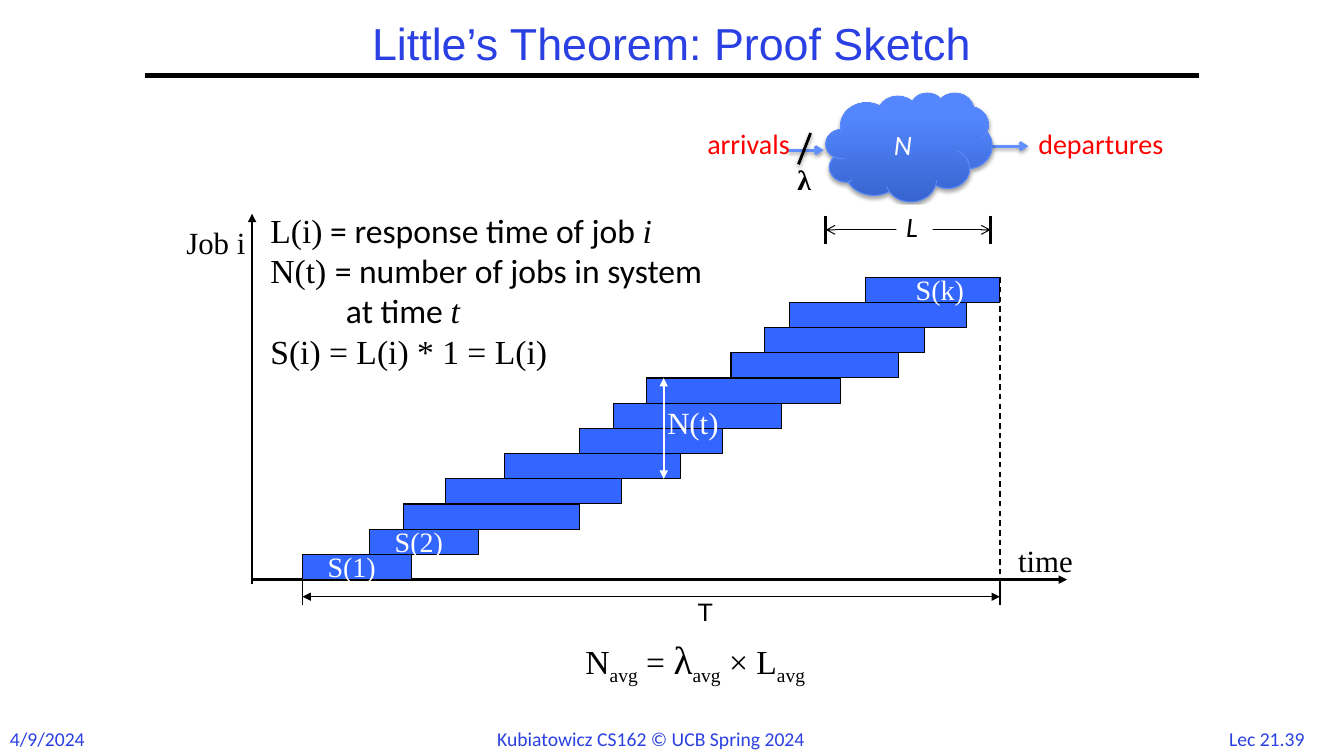
from lxml import etree
from pptx import Presentation
from pptx.dml.color import RGBColor
from pptx.enum.dml import MSO_LINE
from pptx.enum.shapes import MSO_CONNECTOR, MSO_SHAPE
from pptx.enum.text import MSO_ANCHOR, PP_ALIGN
from pptx.oxml.ns import qn
from pptx.util import Emu, Inches, Pt

WIDTH, HEIGHT = Inches(13.33), Inches(7.5)
COL, ROW = Inches(1) / 12, Inches(0.25)  # one time step, one job

BLACK = RGBColor(0x00, 0x00, 0x00)
WHITE = RGBColor(0xFF, 0xFF, 0xFF)
RED = RGBColor(0xFF, 0x00, 0x00)
TITLE_BLUE = RGBColor(0x2A, 0x40, 0xE2)
BAR_BLUE = RGBColor(0x33, 0x66, 0xFF)
FLOW_BLUE = RGBColor(0x61, 0x8F, 0xFD)
CLOUD_DARK = RGBColor(0x37, 0x64, 0xCE)
CLOUD_LIGHT = RGBColor(0x54, 0x87, 0xFF)
CLOUD_EDGE = RGBColor(0x5B, 0x8A, 0xFB)

SANS, SERIF, TITLE_FONT = "Calibri", "Times New Roman", "Arial"

BASE = 23  # row of the time axis
FIRST, LAST = 36, 119  # columns where the observed period T starts and ends
JOBS = [(36, 13), (44, 13), (48, 21), (53, 21), (60, 21), (69, 17),
        (73, 20), (77, 23), (87, 20), (91, 19), (94, 21), (103, 16)]
JOB_LABELS = [(0, "S(1)", 1.8), (1, "S(2)", 1.8), (11, "S(k)", 4.8)]

DEFINITIONS = [
    [("L(i)", SERIF, False), (" = response time of job ", SANS, False), ("i", SERIF, True)],
    [("N(t) ", SERIF, False), ("= number of jobs in system", SANS, False)],
    [("at time ", SANS, False), ("t", SERIF, True)],
    [("S(i) = L(i) * 1 = L(i)", SERIF, False)],
]
FORMULA = [("N", 24, False), ("avg", 24, True), (" = ", 24, False), ("λ", 28, False),
           ("avg", 24, True), (" × L", 24, False), ("avg", 24, True)]


def x(cols):
    return Emu(round(cols * COL))


def y(rows):
    return Emu(round(rows * ROW))


def box(col, row, cols, rows):
    return x(col), y(row), x(cols), y(rows)


def set_font(font, size, name, color=BLACK, bold=False, italic=False):
    font.size, font.name, font.color.rgb = Pt(size), name, color
    if bold:
        font.bold = True
    if italic:
        font.italic = True


def set_effects(sp, alpha=None, distance=1.6):
    """Give a downward shadow of that opacity in percent, or none at all."""
    effects = etree.SubElement(sp._element.spPr, qn("a:effectLst"))
    if alpha:
        shadow = etree.SubElement(effects, qn("a:outerShdw"), blurRad=str(Pt(3.1)),
                                  dist=str(Pt(distance)), dir="5400000", rotWithShape="0")
        color = etree.SubElement(shadow, qn("a:srgbClr"), val=str(BLACK))
        etree.SubElement(color, qn("a:alpha"), val=str(alpha * 1000))


def add_line(slide, start, end, width, color=BLACK, head=None, tail=None,
             dashed=False, shadow=None):
    (x1, y1), (x2, y2) = start, end
    line = slide.shapes.add_connector(MSO_CONNECTOR.STRAIGHT, x(x1), y(y1), x(x2), y(y2))
    line.line.width, line.line.color.rgb = Pt(width), color
    if dashed:
        line.line.dash_style = MSO_LINE.DASH
    ln = line.line._get_or_add_ln()
    for tag, kind in (("a:headEnd", head), ("a:tailEnd", tail)):
        if kind:
            etree.SubElement(ln, qn(tag), type=kind)
    set_effects(line, shadow)


def add_span(slide, first, last, row, width, ticks, tick_width, end):
    """Draw a two-headed arrow between two upright ticks."""
    for col in (first, last):
        add_line(slide, (col, ticks[0]), (col, ticks[1]), tick_width)
    add_line(slide, (first, row), (last, row), width, head=end, tail=end)


def add_frame(slide, place, wrap=False):
    sp = slide.shapes.add_textbox(*box(*place))
    sp.text_frame.word_wrap = wrap
    return sp


def add_label(slide, place, text, size, name, color=BLACK, bold=False, italic=False):
    sp = add_frame(slide, place)
    p = sp.text_frame.paragraphs[0]
    p.text = text
    set_font(p.font, size, name, color, bold, italic)
    return sp


def add_title(slide, text):
    sp = add_label(slide, (17.3, 0.68, 125.3, 2.32), text, 32, TITLE_FONT, TITLE_BLUE)
    tf = sp.text_frame
    tf.word_wrap, tf.vertical_anchor = True, MSO_ANCHOR.MIDDLE
    tf.paragraphs[0].alignment = PP_ALIGN.CENTER
    tf.paragraphs[0].line_spacing = 0.9
    add_line(slide, (17.3, 3), (142.7, 3), 3)


def add_footer(slide):
    for col, cols, text in ((0, 11.5, "4/9/2024"),
                            (58, 44.2, "Kubiatowicz CS162 © UCB Spring 2024"),
                            (145.1, 13, "Lec 21.39")):
        add_label(slide, (col, 28.64, cols, 1.34), text, 14, SANS, TITLE_BLUE)


def add_axes(slide):
    add_line(slide, (30, BASE + 0.16), (30, 8.48), 2, tail="triangle")
    add_line(slide, (30, BASE), (127, BASE), 2, tail="triangle")
    add_label(slide, (120, 21.32, 9, 1.88), "time", 22, SERIF)
    add_label(slide, (21, 8.68, 9.5, 1.88), "Job i", 22, SERIF)
    add_line(slide, (LAST, BASE - len(JOBS)), (LAST, BASE), 1, dashed=True)
    add_span(slide, FIRST, LAST, BASE + 0.68, 1, (BASE, BASE + 1), 1, "triangle")
    add_label(slide, (81.84, 23.48, 4.2, 1.6), "T", 18, TITLE_FONT)


def add_cloud(slide, place, text):
    sp = slide.shapes.add_shape(MSO_SHAPE.CLOUD, *box(*place))
    sp.fill.gradient()
    sp.fill.gradient_angle = 90
    for stop, position, color in zip(sp.fill.gradient_stops, (0, 0.8),
                                     (CLOUD_DARK, CLOUD_LIGHT)):
        stop.position, stop.color.rgb = position, color
    sp.line.width, sp.line.color.rgb = Pt(0.75), CLOUD_EDGE
    set_effects(sp, 35, 1.8)
    tf = sp.text_frame
    tf.vertical_anchor = MSO_ANCHOR.MIDDLE
    p = tf.paragraphs[0]
    p.text, p.alignment = text, PP_ALIGN.CENTER
    set_font(p.font, 20, SANS, WHITE, italic=True)


def add_system(slide):
    for start, end, row in ((93.84, 98.04, 5.96), (118.08, 122.4, 5.8)):
        add_line(slide, (start, row), (end, row), 2, FLOW_BLUE, tail="arrow", shadow=38)
    add_label(slide, (83, 4.84, 13.3, 1.76), "arrivals", 20, SANS, RED)
    add_label(slide, (122.4, 4.84, 18.5, 1.76), "departures", 20, SANS, RED)
    add_cloud(slide, (98.28, 3.68, 19.8, 4.32), "N")
    add_line(slide, (96.48, 5.28), (95.04, 6.52), 2, shadow=38)
    add_label(slide, (93.72, 6.24, 4.1, 1.76), "λ", 20, SERIF, bold=True)
    add_span(slide, 98.28, 117.9, 9.12, 0.75, (8.56, 9.68), 2, "arrow")
    sp = add_label(slide, (106.68, 8.12, 4.32, 1.76), "L", 20, SANS, italic=True)
    sp.fill.solid()
    sp.fill.fore_color.rgb = WHITE


def add_jobs(slide):
    for i, (start, length) in enumerate(JOBS):
        sp = slide.shapes.add_shape(MSO_SHAPE.RECTANGLE,
                                    *box(start, BASE - 1 - i, length, 1))
        sp.shadow.inherit = False
        sp.fill.solid()
        sp.fill.fore_color.rgb = BAR_BLUE
        sp.line.width, sp.line.color.rgb = Pt(0.75), BLACK
    for i, text, offset in JOB_LABELS:
        add_label(slide, (JOBS[i][0] + offset, BASE - 1.4 - i, 8.16, 1.72),
                  text, 20, SERIF, WHITE)
    add_line(slide, (79, 15), (79, 19), 1.5, WHITE, head="triangle", tail="triangle")
    add_label(slide, (78.24, 15.84, 8.5, 1.88), "N(t)", 22, SERIF, WHITE)


def add_definitions(slide):
    tf = add_frame(slide, (31, 8.12, 59, 6.88), wrap=True).text_frame
    for i, runs in enumerate(DEFINITIONS):
        p = tf.add_paragraph() if i else tf.paragraphs[0]
        for text, name, italic in runs:
            r = p.add_run()
            r.text = text
            set_font(r.font, 24, name, italic=italic)
    continuation = tf.paragraphs[2]._p.get_or_add_pPr()
    continuation.set("marL", str(x(9)))
    continuation.set("indent", "0")


def add_formula(slide):
    p = add_frame(slide, (68.5, 25, 32.2, 2.28)).text_frame.paragraphs[0]
    for text, size, subscript in FORMULA:
        r = p.add_run()
        r.text = text
        set_font(r.font, size, SERIF)
        if subscript:
            r.font._element.set("baseline", "-25000")


def main():
    prs = Presentation()
    prs.slide_width, prs.slide_height = WIDTH, HEIGHT
    slide = prs.slides.add_slide(prs.slide_layouts[6])
    add_footer(slide)
    add_title(slide, "Little’s Theorem: Proof Sketch")
    add_axes(slide)
    add_system(slide)
    add_jobs(slide)
    add_definitions(slide)
    add_formula(slide)
    prs.save("out.pptx")


if __name__ == "__main__":
    main()
